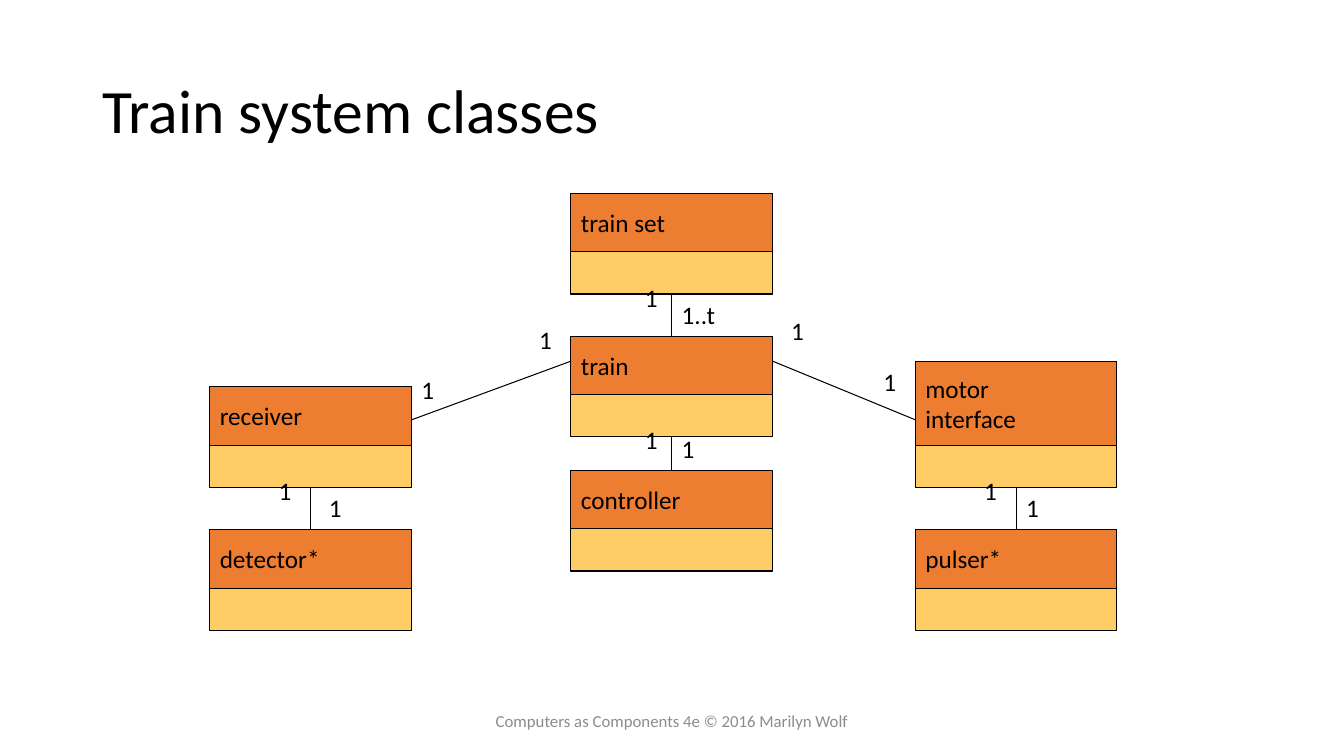
import pptx
import pptx.util
import pptx.dml.color
import pptx.enum.shapes
import pptx.enum.text
import pptx.oxml.ns
import lxml.etree

Cm, Pt = pptx.util.Cm, pptx.util.Pt
ANCHOR = pptx.enum.text.MSO_ANCHOR
ALIGN = pptx.enum.text.PP_ALIGN


def rgb(value):
    return pptx.dml.color.RGBColor.from_string(value)


class ClassDiagram:
    FONT = "Calibri"
    INK, GREY = "000000", "8C8C8C"
    HEAD, BODY = "ED7D31", "FFCC66"
    BOX_W, HEAD_H, BODY_H = 5.08, 1.48, 1.06

    def __init__(self, slide):
        self.s = slide

    def add_text(self, tf, lines, size=18, color=INK, align=ALIGN.LEFT):
        for i, line in enumerate(lines):
            p = tf.paragraphs[0] if i == 0 else tf.add_paragraph()
            p.alignment = align
            r = p.add_run()
            r.text = line
            r.font.name = self.FONT
            r.font.size = Pt(size)
            r.font.color.rgb = rgb(color)

    def title(self, text):
        sp = self.s.shapes.title
        sp.left, sp.top, sp.width, sp.height = Cm(2.33), Cm(1.01), Cm(29.21), Cm(3.68)
        sp.text_frame.vertical_anchor = ANCHOR.MIDDLE
        self.add_text(sp.text_frame, [text], 44)
        sp.text_frame.paragraphs[0].line_spacing = 0.9

    def rect(self, x, y, h, fill):
        sp = self.s.shapes.add_shape(pptx.enum.shapes.MSO_SHAPE.RECTANGLE,
                                     Cm(x), Cm(y), Cm(self.BOX_W), Cm(h))
        sp.shadow.inherit = False
        sp.fill.solid()
        sp.fill.fore_color.rgb = rgb(fill)
        sp.line.color.rgb = rgb(self.INK)
        sp.line.width = Pt(0.75)
        return sp

    def class_box(self, x, y, lines, head_h=HEAD_H):
        tf = self.rect(x, y, head_h, self.HEAD).text_frame
        tf.word_wrap = True
        tf.vertical_anchor = ANCHOR.MIDDLE
        self.add_text(tf, lines)
        self.rect(x, y + head_h, self.BODY_H, self.BODY)

    def line(self, x1, y1, x2, y2):
        c = self.s.shapes.add_connector(pptx.enum.shapes.MSO_CONNECTOR.STRAIGHT,
                                        Cm(x1), Cm(y1), Cm(x2), Cm(y2))
        c.line.color.rgb = rgb(self.INK)
        c.line.width = Pt(0.75)
        lxml.etree.SubElement(c._element.spPr, pptx.oxml.ns.qn("a:effectLst"))

    def label(self, x, y, text, w=0.84):
        tf = self.s.shapes.add_textbox(Cm(x), Cm(y), Cm(w), Cm(1.02)).text_frame
        tf.word_wrap = False
        tf.auto_size = pptx.enum.text.MSO_AUTO_SIZE.SHAPE_TO_FIT_TEXT
        self.add_text(tf, [text])

    def footer(self, text):
        tf = self.s.shapes.add_textbox(Cm(11.22), Cm(17.65), Cm(11.43), Cm(1.02)).text_frame
        tf.word_wrap = True
        tf.vertical_anchor = ANCHOR.MIDDLE
        self.add_text(tf, [text], 12, self.GREY, ALIGN.CENTER)


def main():
    prs = pptx.Presentation()
    prs.slide_width, prs.slide_height = Cm(33.87), Cm(19.05)
    d = ClassDiagram(prs.slides.add_slide(prs.slide_layouts[5]))
    d.title("Train system classes")

    # Classes in three columns
    left, mid, right = 5.29, 14.39, 23.07
    d.class_box(mid, 4.87, ["train set"])
    d.class_box(mid, 8.47, ["train"])
    d.class_box(left, 9.74, ["receiver"])
    d.class_box(mid, 11.85, ["controller"])
    d.class_box(right, 9.1, ["motor", "interface"], 2.12)
    d.class_box(left, 13.34, ["detector*"])
    d.class_box(right, 13.34, ["pulser*"])

    # Vertical associations, centred on their column
    for x, top, bottom in [(mid, 7.41, 8.47), (mid, 11.01, 11.85),
                           (left, 12.28, 13.34), (right, 12.28, 13.34)]:
        d.line(x + d.BOX_W / 2, top, x + d.BOX_W / 2, bottom)

    # Associations from train to either side
    d.line(mid, 9.1, left + d.BOX_W, 10.58)
    d.line(mid + d.BOX_W, 9.1, right, 10.58)

    # Multiplicities
    for x, y in [(16.0, 6.99), (19.69, 7.83), (22.01, 9.1), (24.55, 11.85),
                 (25.61, 12.28), (16.0, 10.58), (16.93, 10.8), (13.34, 8.04),
                 (10.37, 9.31), (6.77, 11.85), (8.04, 12.28)]:
        d.label(x, y, "1")
    d.label(16.93, 7.41, "1..t", 1.35)

    # Footer
    d.footer("Computers as Components 4e © 2016 Marilyn Wolf")
    prs.save("out.pptx")


if __name__ == "__main__":
    main()
